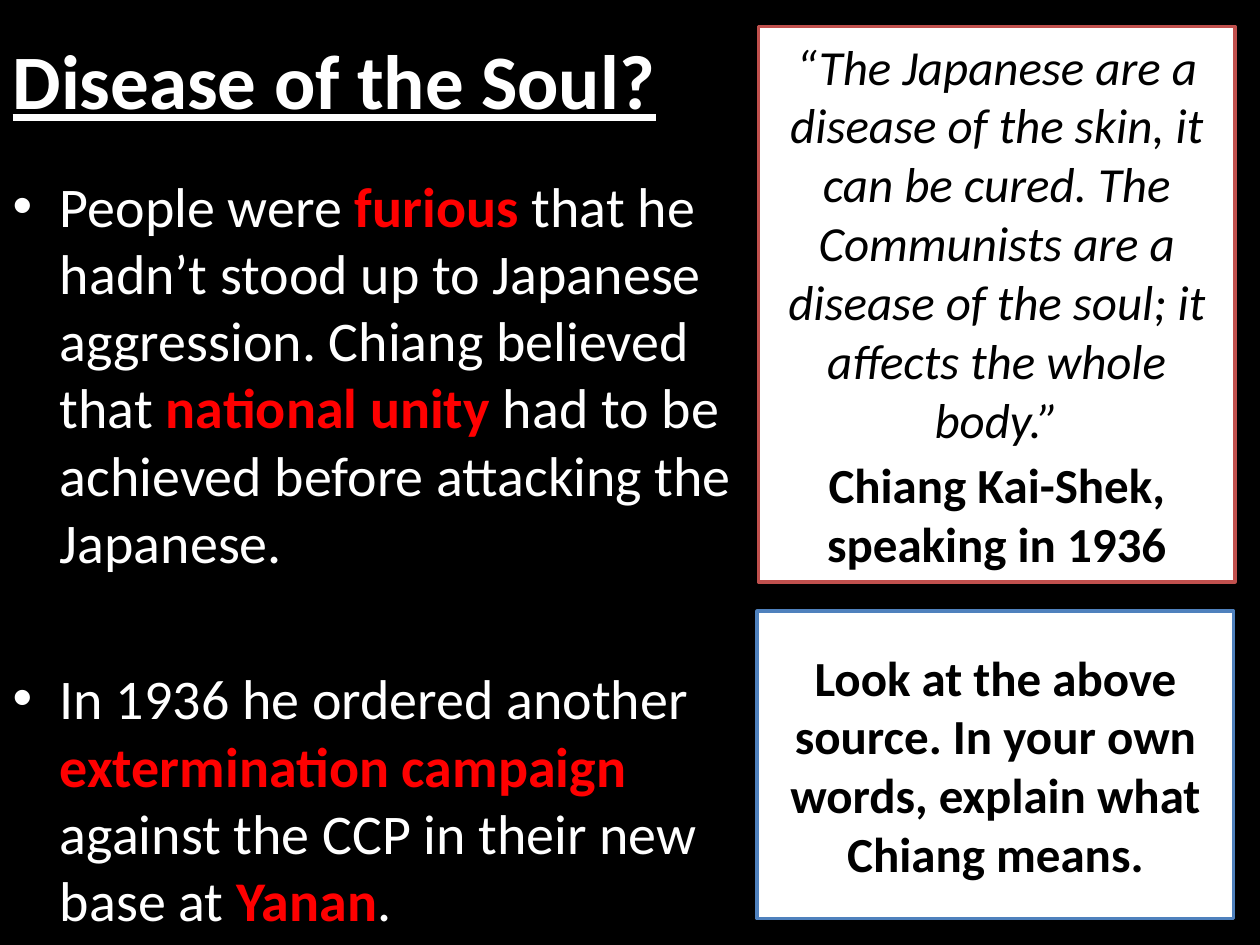
"""Build the "Disease of the Soul?" history slide."""
import pptx
import pptx.dml.color
import pptx.enum.shapes
import pptx.enum.text
import pptx.util

Inches = pptx.util.Inches
Pt = pptx.util.Pt
ALIGN = pptx.enum.text.PP_ALIGN
ANCHOR = pptx.enum.text.MSO_ANCHOR

COLORS = {
    "black": "000000",
    "white": "FFFFFF",
    "key": "FF0000",
    "quote": "C0504D",
    "task": "4F81BD",
}

FORMATS = {
    "title": {"size": Pt(44), "bold": True, "underline": True},
    "body": {"size": Pt(32), "bold": False},
    "key": {"size": Pt(32), "bold": True},
    "quote": {"size": Pt(28), "italic": True},
    "strong": {"size": Pt(28), "bold": True},
}

BULLETS = [
    [
        ("People were ", "body"),
        ("furious", "key"),
        (" that he hadn’t stood up to Japanese aggression. Chiang believed that ", "body"),
        ("national unity ", "key"),
        ("had to be achieved before attacking the Japanese.", "body"),
    ],
    [
        ("In 1936 he ordered another ", "body"),
        ("extermination campaign ", "key"),
        ("against the CCP in their new base at ", "body"),
        ("Yanan", "key"),
        (".", "body"),
    ],
]

QUOTE = [
    [("“The Japanese are a disease of the skin, it can be cured. The Communists are a "
      "disease of the soul; it affects the whole body.”", "quote")],
    [("Chiang Kai-Shek, speaking in 1936", "strong")],
]

TASK = [
    [("Look at the above source. In your own words, explain what Chiang means.", "strong")],
]


class Deck:
    """Holds the style and the current slide."""

    font = "Calibri"

    def __init__(self):
        """Start a deck with one black title-and-content slide."""
        self.prs = pptx.Presentation()
        self.prs.slide_width = Inches(10)
        self.prs.slide_height = Inches(7.5)
        self.s = self.prs.slides.add_slide(self.prs.slide_layouts[1])
        self.paint(self.s.background.fill, "black")

    def color(self, name):
        """Return the named colour."""
        return pptx.dml.color.RGBColor.from_string(COLORS[name])

    def paint(self, fill, name):
        """Make a fill solid in the named colour."""
        fill.solid()
        fill.fore_color.rgb = self.color(name)

    def add_text(self, tf, paragraphs, color, align, gap=0):
        """Fill a text frame with paragraphs of formatted runs."""
        tf.word_wrap = True
        tf.auto_size = pptx.enum.text.MSO_AUTO_SIZE.NONE
        for i, runs in enumerate(paragraphs):
            p = tf.add_paragraph() if i else tf.paragraphs[0]
            p.alignment = align
            p.space_before = Pt(gap if i else 0)
            for text, style in runs:
                r = p.add_run()
                r.text = text
                r.font.name = self.font
                r.font.color.rgb = self.color("key" if style == "key" else color)
                for name, value in FORMATS[style].items():
                    setattr(r.font, name, value)

    def placeholder(self, idx, box, paragraphs, anchor, gap=0):
        """Move and fill a template placeholder."""
        sp = self.s.placeholders[idx]
        sp.left, sp.top, sp.width, sp.height = map(Inches, box)
        sp.text_frame.vertical_anchor = anchor
        self.add_text(sp.text_frame, paragraphs, "white", ALIGN.LEFT, gap)

    def panel(self, box, paragraphs, border, gap=0):
        """Add a white bordered panel with centred text."""
        sp = self.s.shapes.add_shape(
            pptx.enum.shapes.MSO_SHAPE.RECTANGLE, *map(Inches, box))
        sp.shadow.inherit = False
        self.paint(sp.fill, "white")
        self.paint(sp.line.fill, border)
        sp.line.width = Pt(2)
        sp.text_frame.vertical_anchor = ANCHOR.MIDDLE
        self.add_text(sp.text_frame, paragraphs, "black", ALIGN.CENTER, gap)


def main():
    """Build and save the slide."""
    deck = Deck()
    deck.placeholder(0, (0, 0, 10, 1.25), [[("Disease of the Soul?", "title")]], ANCHOR.MIDDLE)
    deck.placeholder(1, (0, 1.31, 6.26, 6.19), BULLETS, ANCHOR.TOP, gap=51)
    deck.panel((6.02, 0.21, 3.78, 4.41), QUOTE, "quote", gap=4)
    deck.panel((6.01, 4.85, 3.78, 2.44), TASK, "task")
    deck.prs.save("out.pptx")


if __name__ == "__main__":
    main()
